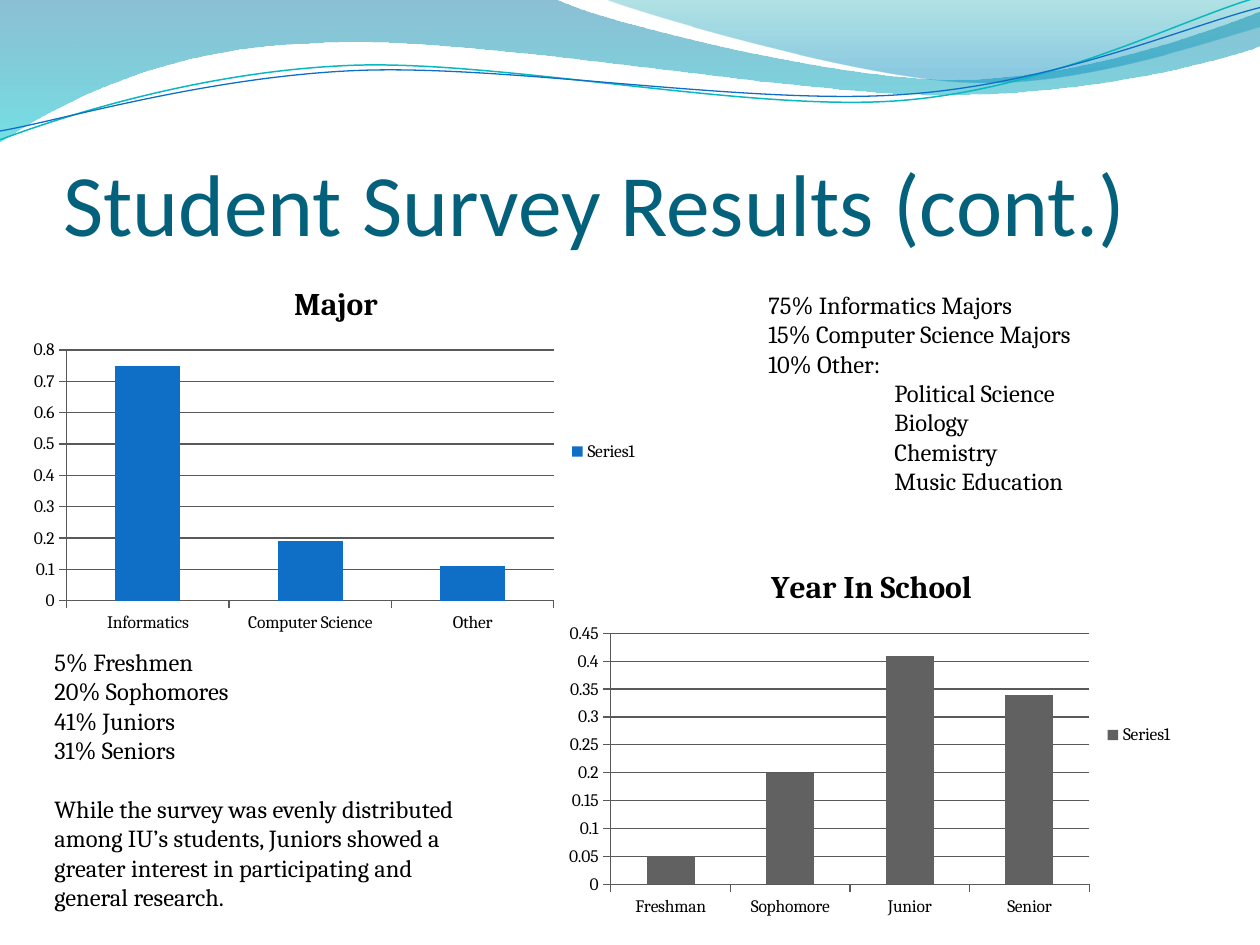
import pptx
import pptx.chart.data
import pptx.dml.color
import pptx.enum.chart
import pptx.enum.text
import pptx.oxml.ns
import pptx.util
from lxml import etree

Inches, Pt, qn = pptx.util.Inches, pptx.util.Pt, pptx.oxml.ns.qn

# Content; charts and notes sit on a grid of twelfths of an inch
TITLE = "Student Survey Results (cont.)"
CHARTS = [
    {"title": "Major", "box": (1 / 6, 25 / 12, 5, 3), "color": "blue",
     "values": {"Informatics": 0.75, "Computer Science": 0.19, "Other": 0.11}},
    {"title": "Year In School", "box": (53 / 12, 13 / 3, 5, 3), "color": "gray",
     "values": {"Freshman": 0.05, "Sophomore": 0.2, "Junior": 0.41, "Senior": 0.34}},
]
# Each paragraph: text, then its format
INDENTED = {"indent": 1}
NOTES = [
    {"box": (6, 2.25, 41 / 12, 1.75), "paragraphs": [
        ("75% Informatics Majors", {}),
        ("15% Computer Science Majors", {}),
        ("10% Other:", {}),
        ("Political Science", INDENTED),
        ("Biology", INDENTED),
        ("Chemistry", INDENTED),
        ("Music Education", INDENTED)]},
    {"box": (1 / 3, 61 / 12, 41 / 12, 2.22), "paragraphs": [
        ("5% Freshmen", {}),
        ("20% Sophomores", {}),
        ("41% Juniors", {}),
        ("31% Seniors", {}),
        ("While the survey was evenly distributed among IU’s students, Juniors showed a "
         "greater interest in participating and general research.", {"space_before": 16.8})]},
]

THEME = {
    "title_font": "Calibri", "body_font": "Cambria",
    "title_size": 50, "chart_title_size": 18, "note_size": 14, "chart_size": 10,
    "title": "04617B", "text": "000000", "blue": "0F6FC6", "gray": "616161",
    "teal": "0AB8BF", "grid": "595959",
}

# Header waves: a start point, then segments of 1 point (line) or 3 points (curve).
# Gradient stops: position, colour, opacity in percent.
WAVES = [
    {"start": (0, 0), "gradient": [(0, "0074A1", 45), (1, "00C6CF", 55)], "segments": [
        [(4.4, -0.01)],
        [(4.76, 0.17), (6.64, 0.63), (7.58, 0.63)],
        [(8.53, 0.63), (9.58, 0.26), (10, 0.09)],
        [(10.01, 0.36)],
        [(9.83, 0.44), (8.7, 0.76), (7.46, 0.75)],
        [(6.22, 0.75), (3.82, 0.28), (2.57, 0.34)],
        [(1.29, 0.36), (0.46, 0.83), (-0.01, 1.13)]]},
    {"start": (4.79, -0.01), "gradient": [(0, "00A1A9", 30), (0.8, "008BBF", 45)], "segments": [
        [(5.09, 0.11), (6.82, 0.62), (7.69, 0.65)],
        [(8.56, 0.69), (9.61, 0.32), (10, 0.21)],
        [(10, 0)]]},
    {"start": (0, 1.11), "line": ("teal", 0.85), "segments": [
        [(0.48, 0.93), (1.58, 0.57), (2.77, 0.52)],
        [(3.95, 0.47), (5.93, 0.89), (7.13, 0.8)],
        [(8.33, 0.71), (9.38, 0.15), (9.98, -0.02)]]},
    {"start": (0, 1.04), "line": ("blue", 0.75), "segments": [
        [(0.47, 0.96), (1.64, 0.61), (2.83, 0.56)],
        [(4.03, 0.51), (5.97, 0.84), (7.17, 0.75)],
        [(8.36, 0.67), (9.41, 0.21), (10, 0.06)]]},
]


def color(name):
    return pptx.dml.color.RGBColor.from_string(THEME.get(name, name))


def set_font(font, face, size, name="text", bold=False):
    formats = {"name": THEME[face], "size": Pt(THEME[size]), "bold": bold}
    for attribute, value in formats.items():
        setattr(font, attribute, value)
    font.color.rgb = color(name)


def bend(shape, segments):
    """Join each group of three line points into one cubic curve."""
    lines = iter(list(shape._element.iter(qn("a:lnTo"))))
    for segment in segments:
        group = [next(lines) for _ in segment]
        if len(group) == 3:
            curve = etree.Element(qn("a:cubicBezTo"))
            group[0].addprevious(curve)
            for line in group:
                curve.append(line[0])
                line.getparent().remove(line)


def add_wave(slide, wave):
    points = [wave["start"]] + [point for segment in wave["segments"] for point in segment]
    points = [(Inches(x), Inches(y)) for x, y in points]
    builder = slide.shapes.build_freeform(*points[0])
    builder.add_line_segments(points[1:], close="gradient" in wave)
    shape = builder.convert_to_shape()
    bend(shape, wave["segments"])
    shape.shadow.inherit = False
    if "line" in wave:
        name, width = wave["line"]
        shape.fill.background()
        shape.line.color.rgb = color(name)
        shape.line.width = Pt(width)
        return
    shape.line.fill.background()
    shape.fill.gradient()
    shape.fill.gradient_angle = 270
    for stop, (position, value, _) in zip(shape.fill.gradient_stops, wave["gradient"]):
        stop.position = position
        stop.color.rgb = color(value)
    # Opacity of the gradient stops
    for element, (_, _, opacity) in zip(shape._element.iter(qn("a:srgbClr")), wave["gradient"]):
        etree.SubElement(element, qn("a:alpha"), val=str(opacity * 1000))


def add_column_chart(slide, item):
    data = pptx.chart.data.CategoryChartData()
    data.categories = list(item["values"])
    data.add_series("", item["values"].values())
    chart = slide.shapes.add_chart(pptx.enum.chart.XL_CHART_TYPE.COLUMN_CLUSTERED,
                                   *map(Inches, item["box"]), data).chart
    set_font(chart.font, "body_font", "chart_size")
    chart.has_title = True
    chart.chart_title.text_frame.text = item["title"]
    title_run = chart.chart_title.text_frame.paragraphs[0].runs[0]
    set_font(title_run.font, "body_font", "chart_title_size", bold=True)
    chart.has_legend = True
    chart.legend.position = pptx.enum.chart.XL_LEGEND_POSITION.RIGHT
    chart.legend.include_in_layout = False
    plot = chart.plots[0]
    plot.gap_width = 150
    plot.vary_by_categories = False
    series = plot.series[0]
    series.format.fill.solid()
    series.format.fill.fore_color.rgb = color(item["color"])
    # An unnamed series gets the automatic legend label
    series._element.remove(series._element.find(qn("c:tx")))
    chart.value_axis.has_major_gridlines = True
    for part in (chart.category_axis, chart.value_axis, chart.value_axis.major_gridlines):
        part.format.line.color.rgb = color("grid")
        part.format.line.width = Pt(0.75)


def add_note(slide, note):
    frame = slide.shapes.add_textbox(*map(Inches, note["box"])).text_frame
    frame.word_wrap = True
    frame.auto_size = pptx.enum.text.MSO_AUTO_SIZE.SHAPE_TO_FIT_TEXT
    for index, (text, formats) in enumerate(note["paragraphs"]):
        paragraph = frame.add_paragraph() if index else frame.paragraphs[0]
        run = paragraph.add_run()
        run.text = text
        set_font(run.font, "body_font", "note_size")
        if "indent" in formats:
            paragraph._p.get_or_add_pPr().set("marL", str(Inches(formats["indent"])))
        if "space_before" in formats:
            paragraph.space_before = Pt(formats["space_before"])


def format_title(slide):
    title = slide.shapes.title
    slide.shapes._spTree.append(title._element)  # in front of the waves
    title.left, title.top, title.width, title.height = map(Inches, (0.5, 0.77, 9.08, 1.25))
    frame = title.text_frame
    frame.text = TITLE
    formats = {"margin_left": 0, "margin_top": Inches(0.05), "margin_right": 0,
               "margin_bottom": 0, "word_wrap": True,
               "vertical_anchor": pptx.enum.text.MSO_ANCHOR.BOTTOM,
               "auto_size": pptx.enum.text.MSO_AUTO_SIZE.NONE}
    for attribute, value in formats.items():
        setattr(frame, attribute, value)
    frame.paragraphs[0].alignment = pptx.enum.text.PP_ALIGN.LEFT
    set_font(frame.paragraphs[0].runs[0].font, "title_font", "title_size", "title")


def main():
    presentation = pptx.Presentation()
    presentation.slide_width, presentation.slide_height = Inches(10), Inches(7.5)
    slide = presentation.slides.add_slide(presentation.slide_layouts.get_by_name("Title Only"))
    for wave in WAVES:
        add_wave(slide, wave)
    format_title(slide)
    for item in CHARTS:
        add_column_chart(slide, item)
    for note in NOTES:
        add_note(slide, note)
    presentation.save("out.pptx")


if __name__ == "__main__":
    main()
